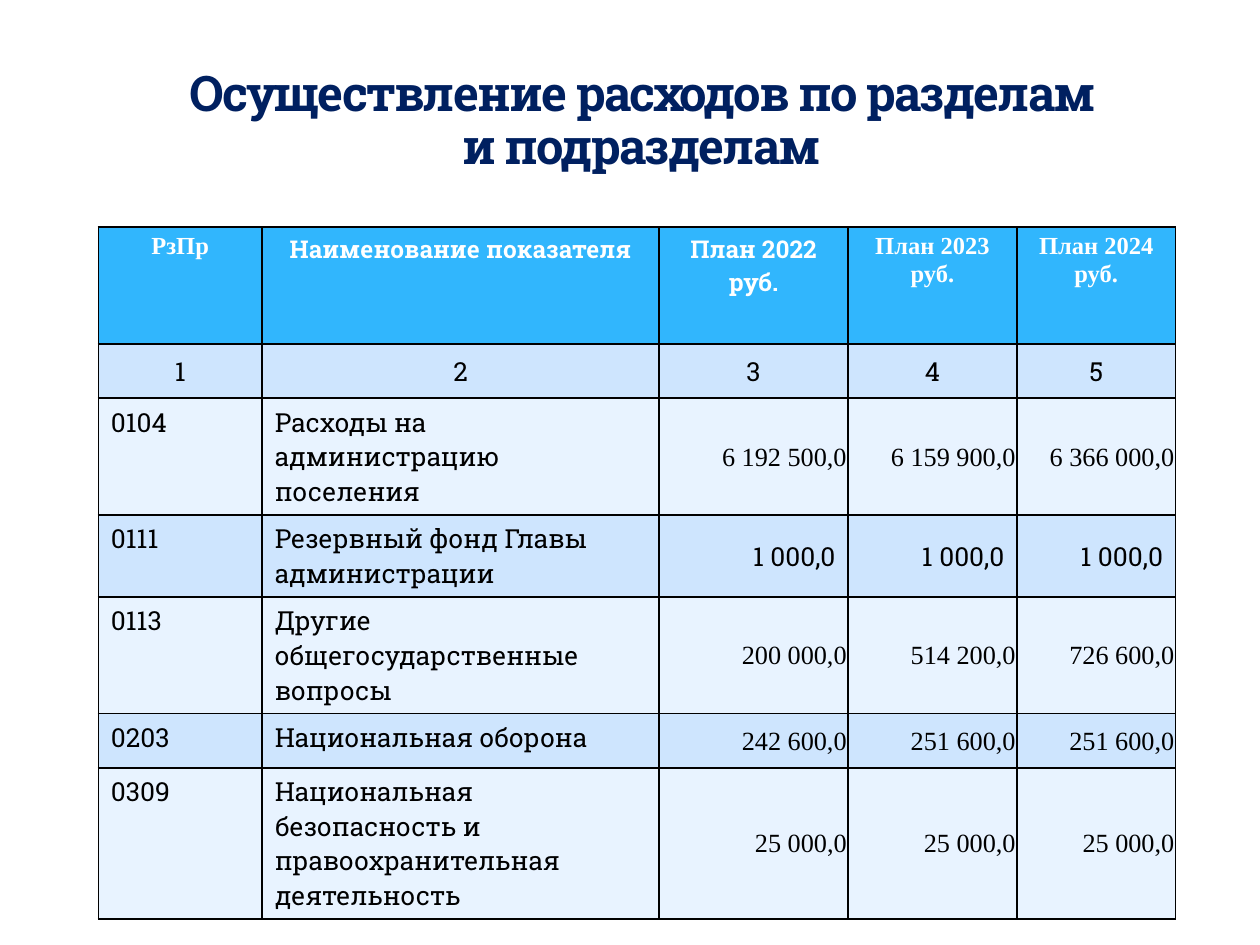
from dataclasses import dataclass

from lxml import etree
from pptx import Presentation
from pptx import util as u
from pptx.dml.color import RGBColor
from pptx.enum import text
from pptx.oxml.ns import qn

ALIGN = text.PP_ALIGN
ANCHOR = text.MSO_ANCHOR


@dataclass(frozen=True)
class Theme:
    slab: str = "Roboto Slab"
    serif: str = "Times New Roman"
    title_size: float = 28
    head_size: float = 14
    body_size: float = 15
    navy: str = "002060"
    outline: str = "AFCCDE"
    white: str = "FFFFFF"
    black: str = "000000"
    head_fill: str = "31B6FD"
    bands: tuple = ("E8F3FF", "CEE5FE")


def add_line(parent, tag, width, color, alpha=None):
    """Append a solid line definition under the given DrawingML tag."""
    line = etree.SubElement(parent, qn(tag), w=str(u.Pt(width)))
    fill = etree.SubElement(line, qn("a:solidFill"))
    clr = etree.SubElement(fill, qn("a:srgbClr"), val=color)
    if alpha is not None:
        etree.SubElement(clr, qn("a:alpha"), val=str(alpha * 1000))
    return line


class Deck:
    def __init__(self, theme):
        self.theme = theme
        self.prs = Presentation()
        self.prs.slide_width, self.prs.slide_height = u.Pt(720), u.Pt(540)
        self.slide = self.prs.slides.add_slide(self.prs.slide_layouts[6])

    def style(self, tf, font, size, color, bold=False, align=ALIGN.LEFT):
        for p in tf.paragraphs:
            p.alignment = align
            for r in p.runs:
                r.font.name, r.font.size, r.font.bold = font, u.Pt(size), bold
                r.font.color.rgb = RGBColor.from_string(color)

    def title(self, words, left, top, width, height):
        t = self.theme
        sp = self.slide.shapes.add_textbox(*map(u.Pt, (left, top, width, height)))
        tf = sp.text_frame
        tf.word_wrap = True
        tf.vertical_anchor = ANCHOR.BOTTOM
        tf.text = words
        self.style(tf, t.slab, t.title_size, t.navy, True, ALIGN.CENTER)
        p = tf.paragraphs[0]
        p.line_spacing = 0.9
        r_pr = p.runs[0].font._element
        r_pr.set("spc", "-100")
        r_pr.insert(0, add_line(r_pr, "a:ln", 0.25, t.outline, 25))

    def table(self, left, top, widths, heights):
        frame = self.slide.shapes.add_table(
            len(heights), len(widths),
            *map(u.Pt, (left, top, sum(widths), sum(heights))))
        table = frame.table
        for column, width in zip(table.columns, widths):
            column.width = u.Pt(width)
        for row, height in zip(table.rows, heights):
            row.height = u.Pt(height)
        return table

    def cell(self, cell, words, fill, font, size, color, bold=False,
             align=ALIGN.LEFT, anchor=ANCHOR.TOP, tight=False):
        tf = cell.text_frame
        tf.text = words
        self.style(tf, font, size, color, bold, align)
        cell.vertical_anchor = anchor
        if tight:
            cell.margin_left = cell.margin_right = cell.margin_top = u.Pt(0.75)
            cell.margin_bottom = 0
        tc_pr = cell._tc.get_or_add_tcPr()
        for side in ("a:lnL", "a:lnR", "a:lnT", "a:lnB"):
            add_line(tc_pr, side, 1, self.theme.black)
        cell.fill.solid()
        cell.fill.fore_color.rgb = RGBColor.from_string(fill)


HEADERS = ["РзПр", "Наименование показателя", "План 2022\nруб.",
           "План 2023 руб.", "План 2024 руб."]
ROWS = [
    ["1", "2", "3", "4", "5"],
    ["0104", "Расходы на администрацию поселения",
     "6 192 500,0", "6 159 900,0", "6 366 000,0"],
    ["0111", "Резервный фонд Главы администрации",
     "1 000,0", "1 000,0", "1 000,0"],
    ["0113", "Другие общегосударственные вопросы",
     "200 000,0", "514 200,0", "726 600,0"],
    ["0203", "Национальная оборона", "242 600,0", "251 600,0", "251 600,0"],
    ["0309", "Национальная безопасность и правоохранительная деятельность",
     "25 000,0", "25 000,0", "25 000,0"],
]
SLAB_HEADERS = (1, 2)
RESERVE_FUND = "0111"


def main():
    t = Theme()
    deck = Deck(t)
    table = deck.table(56.2, 129.6, [93.6, 226.8, 108, 96.5, 90.7],
                       [67, 31, 23, 23, 52, 31, 63])

    for col, words in enumerate(HEADERS):
        font = t.slab if col in SLAB_HEADERS else t.serif
        deck.cell(table.cell(0, col), words, t.head_fill, font, t.head_size,
                  t.white, bold=True, align=ALIGN.CENTER)

    for row, values in enumerate(ROWS, start=1):
        for col, words in enumerate(values):
            font, align, anchor, tight = t.slab, ALIGN.LEFT, ANCHOR.TOP, False
            if row == 1:
                align, anchor = ALIGN.CENTER, ANCHOR.MIDDLE
            elif col >= 2:
                align, anchor = ALIGN.RIGHT, ANCHOR.MIDDLE
                tight = values[0] != RESERVE_FUND
                font = t.serif if tight else t.slab
            deck.cell(table.cell(row, col), words, t.bands[row % 2], font,
                      t.body_size, t.black, align=align, anchor=anchor,
                      tight=tight)

    deck.title("Осуществление расходов по разделам и подразделам",
               90, 67.7, 553, 36)
    deck.prs.save("out.pptx")


if __name__ == "__main__":
    main()
